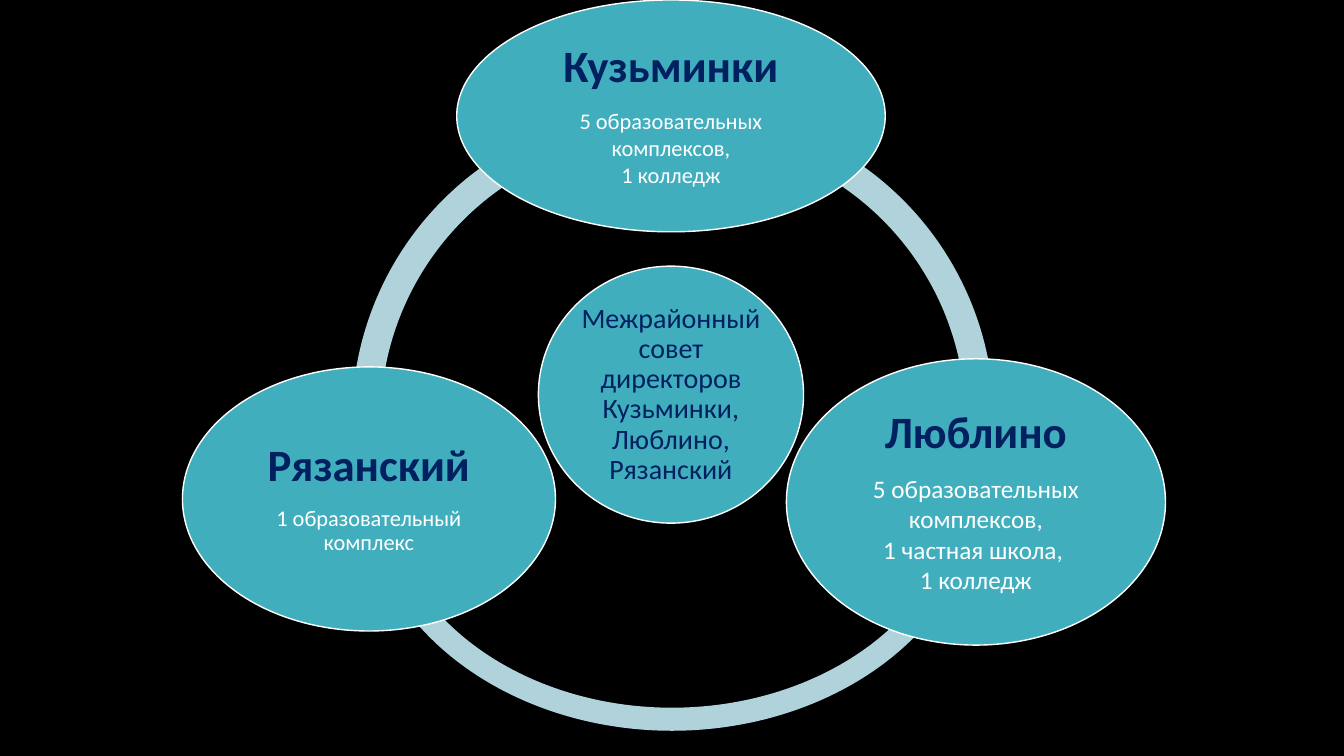
"""Build a slide with three districts on a ring around their shared council."""
from dataclasses import dataclass

from pptx import Presentation
from pptx.dml.color import RGBColor
from pptx.enum.shapes import MSO_SHAPE
from pptx.enum.text import MSO_ANCHOR, PP_ALIGN
from pptx.util import Inches, Pt


@dataclass(frozen=True)
class Theme:
    font: str = "Calibri"
    background: RGBColor = RGBColor(0, 0, 0)
    ring: RGBColor = RGBColor(0xB0, 0xD3, 0xDB)
    oval: RGBColor = RGBColor(0x41, 0xAE, 0xBD)
    navy: RGBColor = RGBColor(0, 0x20, 0x60)
    white: RGBColor = RGBColor(255, 255, 255)
    name: int = 32
    council: int = 20
    large: int = 18
    body: int = 16


theme = Theme()


def write(p, text, size, color, bold=False, tight=False):
    """Fill a centred paragraph; tight text has closer lines and space after."""
    p.text = text
    p.alignment = PP_ALIGN.CENTER
    p.line_spacing = 0.9 if tight else 1.0
    p.space_after = Pt(round(size * 0.35) if tight else 0)
    for r in p.runs:
        r.font.name = theme.font
        r.font.size = Pt(size)
        r.font.bold = bold
        r.font.color.rgb = color


def add_figure(kind, box, fill):
    """Add a flat filled shape without an outline."""
    sp = s.shapes.add_shape(kind, *[Inches(v) for v in box])
    sp.shadow.inherit = False
    sp.fill.solid()
    sp.fill.fore_color.rgb = fill
    sp.line.fill.background()
    return sp


prs = Presentation()
prs.slide_width, prs.slide_height = Inches(13.33), Inches(7.5)
s = prs.slides.add_slide(prs.slide_layouts[6])
s.background.fill.solid()
s.background.fill.fore_color.rgb = theme.background

arcs = [
    ((3.49, 1.08, 6.17, 6.17), 99.03, 162.9),
    ((3.58, 2.27, 6.17, 4.98), 2.52, 105.85),
    ((3.69, 1.08, 6.17, 6.17), 160.63, 9.37),
]
for box, start, end in arcs:
    sp = add_figure(MSO_SHAPE.BLOCK_ARC, box, theme.ring)
    for i, value in enumerate((start, end, 0.046)):
        sp.adjustments[i] = value

name_style = dict(size=theme.name, color=theme.navy, bold=True, tight=True)
body_style = dict(size=theme.body, color=theme.white)
large_style = dict(size=theme.large, color=theme.white)
ovals = [
    ((5.34, 2.64, 2.63, 2.55), 0.03, [
        ("Межрайонный совет директоров Кузьминки, Люблино, Рязанский",
         dict(size=theme.council, color=theme.navy, tight=True)),
    ]),
    ((4.53, 0, 4.25, 2.3), 0.04, [
        ("Кузьминки", name_style),
        ("5 образовательных комплексов,", body_style),
        ("1 колледж", body_style),
    ]),
    ((7.8, 3.56, 3.76, 2.84), 0.04, [
        ("Люблино", name_style),
        ("5 образовательных комплексов,\v1 частная школа, ", large_style),
        ("1 колледж", large_style),
    ]),
    ((1.81, 3.64, 3.7, 2.62), 0.04, [
        ("Рязанский", name_style),
        ("1 образовательный комплекс", dict(body_style, tight=True)),
    ]),
]
for box, inset, lines in ovals:
    sp = add_figure(MSO_SHAPE.OVAL, box, theme.oval)
    sp.line.color.rgb = theme.white
    sp.line.width = Pt(1)
    tf = sp.text_frame
    tf.word_wrap = True
    tf.vertical_anchor = MSO_ANCHOR.MIDDLE
    tf.margin_left = tf.margin_right = Inches(inset)
    tf.margin_top = tf.margin_bottom = Inches(inset)
    for i, (text, style) in enumerate(lines):
        p = tf.add_paragraph() if i else tf.paragraphs[0]
        write(p, text, **style)

prs.save("out.pptx")
